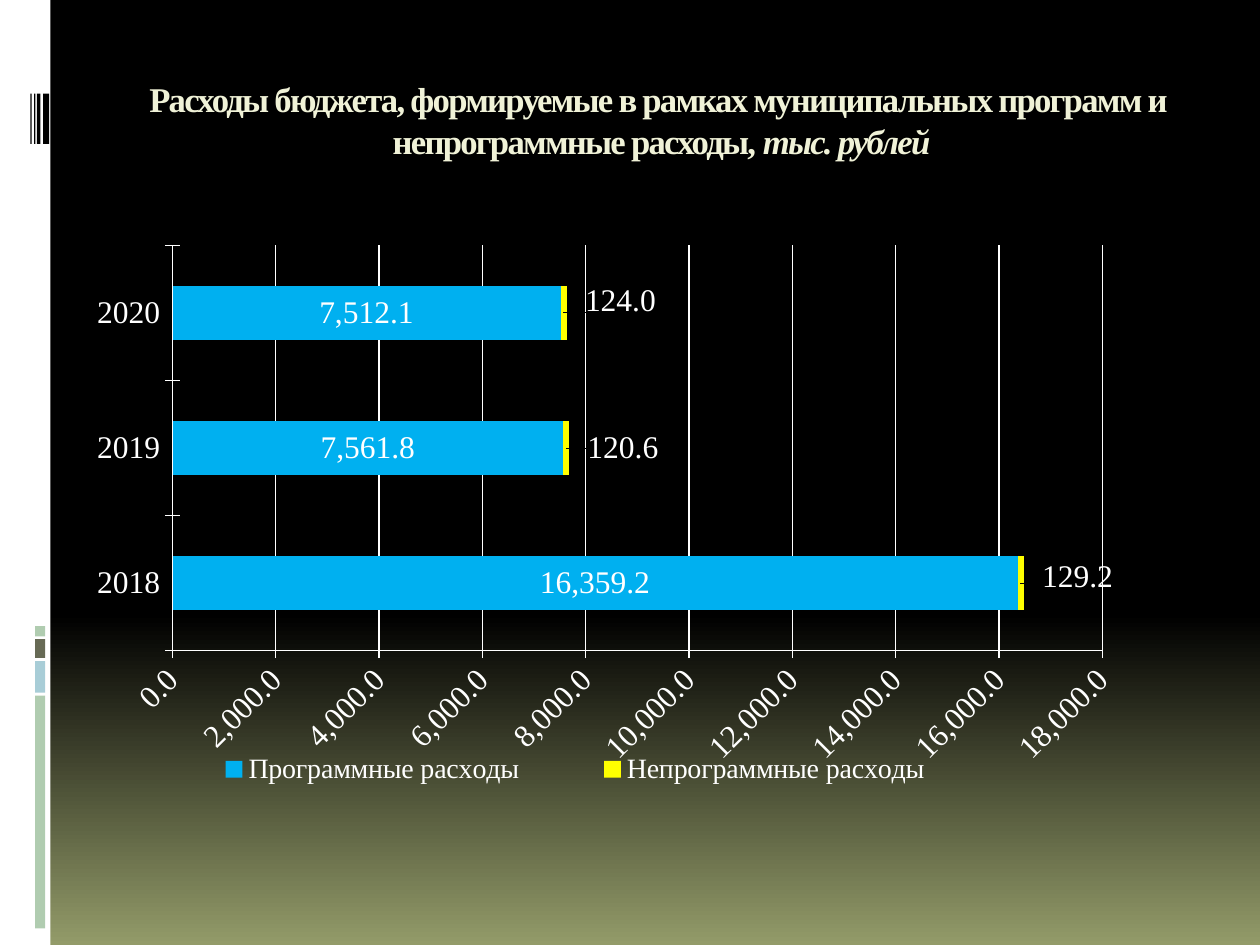
from copy import deepcopy
from dataclasses import dataclass

from pptx import Presentation
from pptx import util as u
from pptx.chart.data import CategoryChartData
from pptx.dml.color import RGBColor
from pptx.enum import chart as ch, shapes, text
from pptx.oxml import parse_xml
from pptx.oxml.ns import nsdecls, qn


@dataclass(frozen=True)
class Theme:
    white: str = "FFFFFF"
    black: str = "000000"
    olive: str = "939B69"
    cream: str = "F0F2D7"
    green: str = "B0CCB0"
    blue: str = "A8CDD7"
    gray: str = "676A55"
    program: str = "00B0F0"
    other: str = "FFFF00"
    font: str = "Times New Roman"
    base_font: str = "Cabin"
    title_size: float = 19.8
    chart_size: float = 18
    legend_size: float = 16


@dataclass(frozen=True)
class Bar:
    left: float
    top: float
    width: float
    height: float
    color: str


T = Theme()

SIDE_BARS = [
    Bar(0, 0, 28.8, 540, T.white),
    *(Bar(20, top, 5.8, height, color) for top, height, color in [
        (397.6, 133, T.green), (377.8, 18, T.blue),
        (365.2, 10.8, T.gray), (357.8, 5.8, T.green)]),
    *(Bar(left, 53.5, width, 28.8, T.black) for left, width in [
        (24.6, 3.5), (21.1, 2), (19.5, 0.7), (17.4, 0.7)]),
]

# Shifts of the outer labels, as fractions of the chart
LABEL_SHIFTS = [(0.05, -0.01), (0.05, 0), (0.05, -0.02)]


def rgb(color: str) -> RGBColor:
    return RGBColor.from_string(color)


def paint_background(s) -> None:
    fill = s.background.fill
    fill.gradient()
    fill.gradient_angle = 270
    stops = s.element.find(".//" + qn("a:gsLst"))
    stops.insert(1, deepcopy(stops[0]))
    for stop, (pos, color) in zip(fill.gradient_stops,
                                  [(0, T.black), (0.65, T.black), (1, T.olive)]):
        stop.position = pos
        stop.color.rgb = rgb(color)


def draw_bar(s, bar: Bar) -> None:
    sp = s.shapes.add_shape(shapes.MSO_SHAPE.RECTANGLE, u.Pt(bar.left), u.Pt(bar.top),
                            u.Pt(bar.width), u.Pt(bar.height))
    sp.shadow.inherit = False
    sp.fill.solid()
    sp.fill.fore_color.rgb = rgb(bar.color)
    sp.line.fill.background()


def write_title(s) -> None:
    sp = s.shapes.title
    sp.left, sp.top, sp.width, sp.height = u.Pt(72), u.Pt(40.3), u.Pt(612), u.Pt(72)
    tf = sp.text_frame
    tf.word_wrap = True
    tf.auto_size = text.MSO_AUTO_SIZE.NONE
    tf.vertical_anchor = text.MSO_ANCHOR.TOP
    tf.margin_top = u.Pt(4)
    p = tf.paragraphs[0]
    p.text = ("Расходы бюджета, формируемые в рамках муниципальных программ и \v"
              "непрограммные расходы, ")
    p.alignment = text.PP_ALIGN.CENTER
    p.line_spacing = u.Pt(24)
    unit = p.add_run()
    unit.text = "тыс. рублей"
    unit.font.italic = True
    for r in p.runs:
        r.font.name, r.font.size, r.font.bold = T.font, u.Pt(T.title_size), True
        r.font.color.rgb = rgb(T.cream)
        r.font._element.set("spc", "-100")


def layout_xml(x: float, y: float, w: float = 0, h: float = 0, inner: bool = False):
    """Manual layout: a shift when w is 0, otherwise a frame."""
    parts = '<c:layoutTarget val="inner"/>' if inner else ""
    if w:
        parts += '<c:xMode val="edge"/><c:yMode val="edge"/>'
    parts += f'<c:x val="{x}"/><c:y val="{y}"/>'
    if w:
        parts += f'<c:w val="{w}"/><c:h val="{h}"/>'
    return parse_xml(f'<c:layout {nsdecls("c")}><c:manualLayout>{parts}'
                     '</c:manualLayout></c:layout>')


def set_layout(parent, layout, index: int) -> None:
    for old in parent.findall(qn("c:layout")):
        parent.remove(old)
    parent.insert(index, layout)


def style_font(font, size: float, name: str = T.font) -> None:
    font.name, font.size = name, u.Pt(size)
    font.color.rgb = rgb(T.white)


def style_line(line) -> None:
    line.color.rgb = rgb(T.white)
    line.width = u.Pt(0.75)


def style_axis(axis) -> None:
    axis.major_tick_mark = ch.XL_TICK_MARK.CROSS
    axis.minor_tick_mark = ch.XL_TICK_MARK.NONE
    style_font(axis.tick_labels.font, T.chart_size)
    style_line(axis.format.line)


def draw_chart(s) -> None:
    data = CategoryChartData(number_format="#,##0.0")
    data.categories = ["2018", "2019", "2020"]
    data.add_series("Программные расходы", [16359.2, 7561.8, 7512.1])
    data.add_series("Непрограммные расходы", [129.2, 120.6, 124])
    chart = s.shapes.add_chart(ch.XL_CHART_TYPE.BAR_STACKED, u.Pt(33.8), u.Pt(129.6),
                               u.Pt(648), u.Pt(356.4), data).chart
    chart.has_title = False
    style_font(chart.font, T.chart_size, T.base_font)
    chart.element.find(qn("c:chart")).addnext(
        parse_xml(f'<c:spPr {nsdecls("c", "a")}><a:noFill/><a:ln><a:noFill/></a:ln></c:spPr>'))

    # Axes and plot frame
    style_axis(chart.category_axis)
    axis = chart.value_axis
    style_axis(axis)
    axis.minimum_scale, axis.maximum_scale, axis.major_unit = 0, 18000, 2000
    axis.has_major_gridlines = True
    style_line(axis.major_gridlines.format.line)
    axis.tick_labels.number_format = "#,##0.0"
    axis.tick_labels.number_format_is_linked = False
    axis._element.find(qn("c:txPr")).find(qn("a:bodyPr")).set("rot", "-2700000")
    set_layout(chart.element.find(".//" + qn("c:plotArea")),
               layout_xml(0.1, 0.03, 0.82, 0.65, inner=True), 0)

    # Series and value labels
    plot = chart.plots[0]
    plot.overlap, plot.gap_width, plot.vary_by_categories = 100, 150, False
    for series, color in zip(plot.series, [T.program, T.other]):
        series.format.fill.solid()
        series.format.fill.fore_color.rgb = rgb(color)
        labels = series.data_labels
        labels.show_value = True
        labels.number_format, labels.number_format_is_linked = "#,##0.0", False
        style_font(labels.font, T.chart_size)
    for i, shift in enumerate(LABEL_SHIFTS):
        label = plot.series[1].points[i].data_label
        style_font(label.font, T.chart_size)
        set_layout(label._dLbl, layout_xml(*shift), 1)

    # Legend
    chart.has_legend = True
    legend = chart.legend
    legend.position = ch.XL_LEGEND_POSITION.RIGHT
    legend.include_in_layout = False
    style_font(legend.font, T.legend_size)
    set_layout(legend._element, layout_xml(0.08, 0.83, 0.75, 0.08), 1)


def main() -> None:
    prs = Presentation()
    prs.slide_width, prs.slide_height = u.Pt(720), u.Pt(540)
    s = prs.slides.add_slide(prs.slide_layouts[5])
    paint_background(s)
    for bar in SIDE_BARS:
        draw_bar(s, bar)
    write_title(s)
    draw_chart(s)
    prs.save("out.pptx")


if __name__ == "__main__":
    main()
